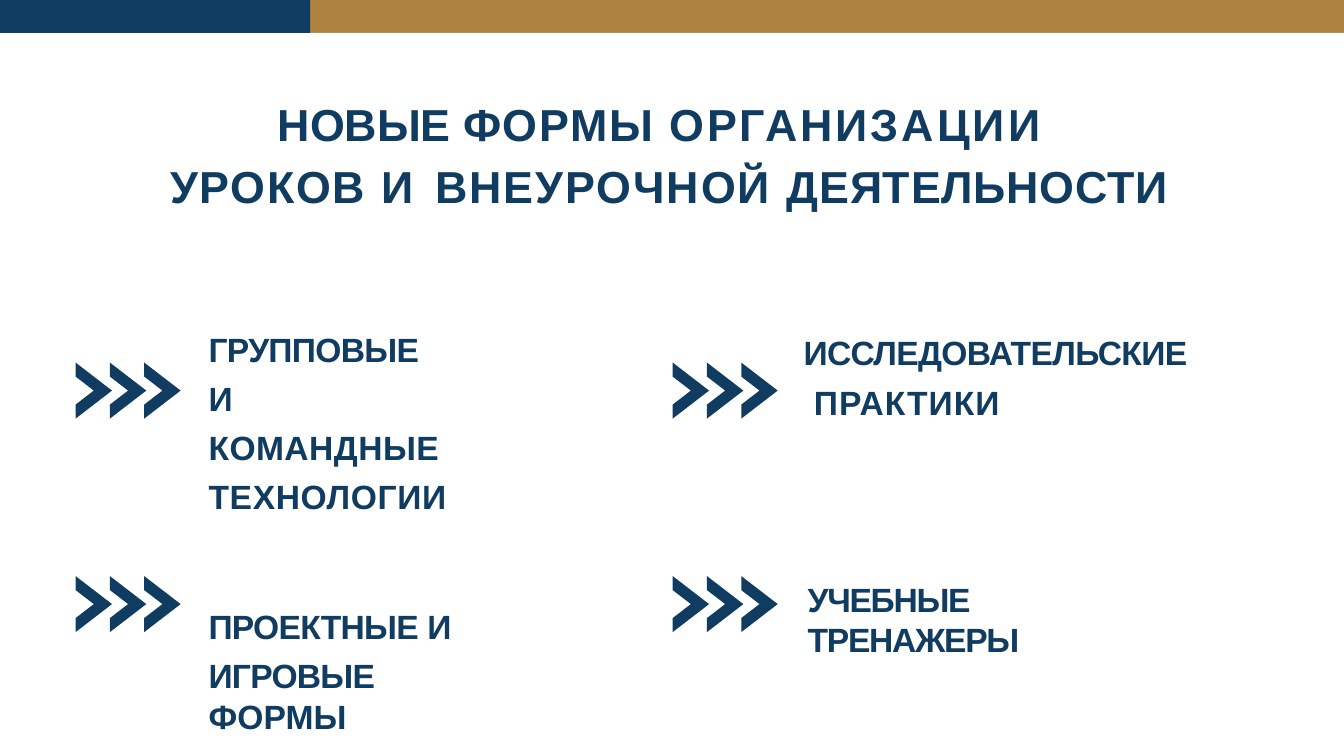
from pptx import Presentation
from pptx.dml.color import RGBColor
from pptx.enum.shapes import MSO_SHAPE
from pptx.util import Pt

RECTANGLE = MSO_SHAPE.RECTANGLE
PX = 9525
NAVY, GOLD, WHITE = "113C61", "AE8340", "FFFFFF"


def paint(shape, color):
    shape.fill.solid()
    shape.fill.fore_color.rgb = RGBColor.from_string(color)
    shape.line.fill.background()
    shape.shadow.inherit = False


def add_text(page, frame, size, paragraphs):
    """Each paragraph is (space before, line spacing, first indent, lines of (text, tracking))."""
    box = page.shapes.add_textbox(*(value * PX for value in frame))
    text = box.text_frame
    text.word_wrap = True
    text.margin_left = text.margin_right = text.margin_bottom = 0
    text.margin_top = PX
    for number, (before, spacing, indent, lines) in enumerate(paragraphs):
        para = text.add_paragraph() if number else text.paragraphs[0]
        para.space_before = Pt(before)
        para.line_spacing = spacing
        para.font.name = "Arial"
        para.font.size = Pt(size)
        para.font.bold = True
        para.font.color.rgb = RGBColor.from_string(NAVY)
        properties = para._p.get_or_add_pPr()
        properties.set("marL", str(PX))
        properties.set("indent", str(indent * PX))
        for row, line in enumerate(lines):
            if row:
                para.add_line_break()
            for words, tracking in line:
                span = para.add_run()
                span.text = words
                span.font._element.set("spc", str(round(tracking * 100)))


deck = Presentation()
deck.slide_width, deck.slide_height = 1920 * PX, 1080 * PX
page = deck.slides.add_slide(deck.slide_layouts[6])

for left, top, width, height, color in [
    (443, 0, 1477, 47, GOLD),
    (0, 47, 1920, 1033, WHITE),
    (0, 0, 443, 47, NAVY),
]:
    band = page.shapes.add_shape(RECTANGLE, left * PX, top * PX, width * PX, height * PX)
    paint(band, color)

# Triple chevrons in a grid of two columns and two rows
CHEVRON = [(0, 80), (0, 60), (26, 40), (0, 20), (0, 0), (52, 40)]
for left in (108, 961):
    for top in (518, 823):
        outline = None
        for step in range(3):
            points = [(left + 49 * step + x, top + y) for x, y in CHEVRON]
            if outline is None:
                outline = page.shapes.build_freeform(*points[0], scale=PX)
            else:
                outline.move_to(*points[0])
            outline.add_line_segments(points[1:], close=True)
        paint(outline.convert_to_shape(), NAVY)

add_text(page, (242, 127, 1435, 178), 48, [
    (1, 1.14, 154, [
        [("НОВЫЕ ", -0.1), ("ФОРМЫ ", 1.8), ("ОРГАНИЗАЦИИ", 3.2)],
        [("УРОКОВ ", 1.9), ("И ", 5), ("ВНЕУРОЧНОЙ ", 2.1), ("ДЕЯТЕЛЬНОСТИ", 0.8)],
    ]),
])
add_text(page, (297, 456, 451, 466), 36, [
    (1, 1.22, 0, [
        [("ГРУППОВЫЕ", -0.7)],
        [("И", 3.8)],
        [("КОМАНДНЫЕ", 0.5)],
        [("ТЕХНОЛОГИИ", 0.7)],
    ]),
    (96, 1, 0, [[("ПРОЕКТНЫЕ ", -0.8), ("И", 3.8)]]),
    (9.3, 1, 0, [[("ИГРОВЫЕ", -0.8)], [("ФОРМЫ", 0.1)]]),
])
add_text(page, (1147, 461, 557, 143), 36, [
    (1, 1.22, 0, [[("ИССЛЕДОВАТЕЛЬСКИЕ", -0.7)], [(" ПРАКТИКИ", 1.1)]]),
])
add_text(page, (1153, 826, 546, 60), 36, [
    (1, 1, 0, [[("УЧЕБНЫЕ", -1.4)], [("ТРЕНАЖЕРЫ", -1.4)]]),
])

deck.save("out.pptx")
